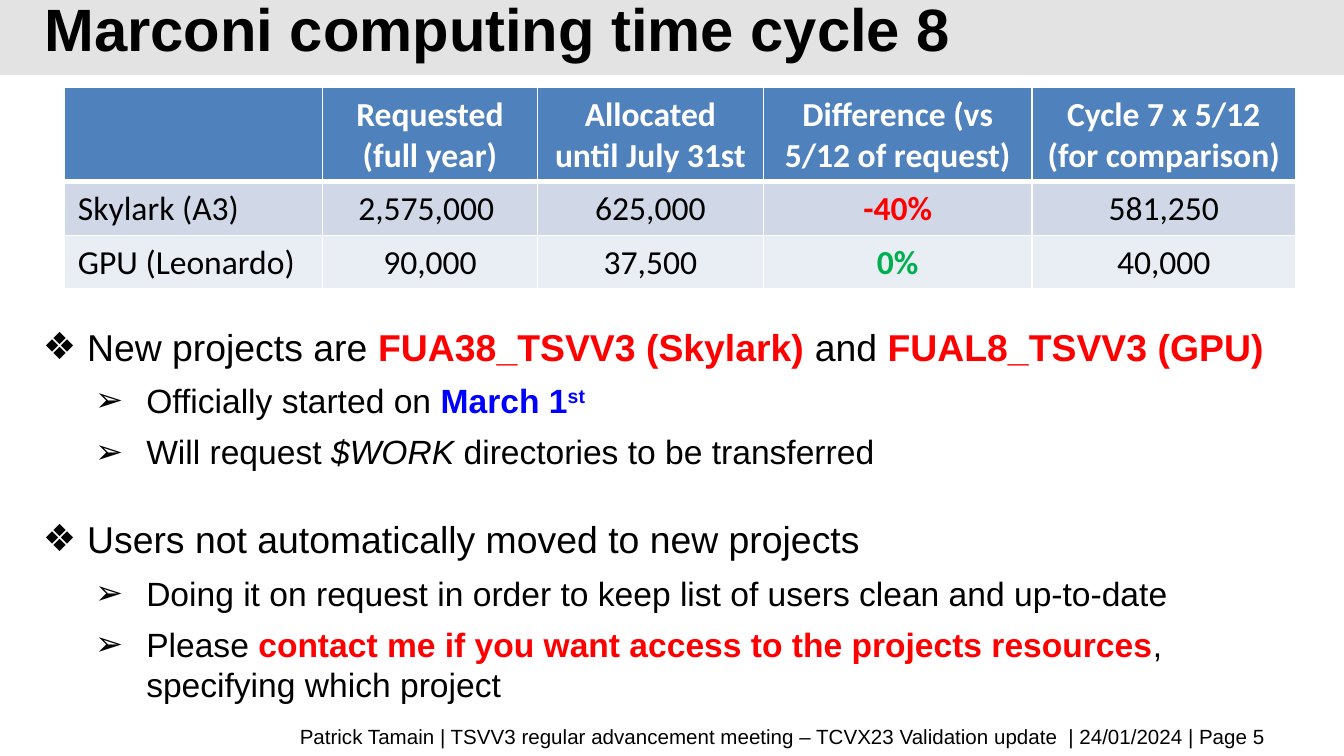
from lxml.etree import SubElement
from pptx import Presentation
from pptx.dml.color import RGBColor
from pptx.enum.shapes import MSO_SHAPE
from pptx.enum.text import MSO_ANCHOR, PP_ALIGN
from pptx.oxml.ns import qn
from pptx.util import Inches, Pt

COLORS = {
    "black": "000000", "white": "FFFFFF", "band": "E3E3E3", "red": "FF0000",
    "blue": "0000FF", "green": "00B050", "head": "4F81BD",
    "odd": "D0D8E8", "even": "E9EDF4",
}
COLS = [1.92, 1.6, 1.68, 2, 1.96]
ROWS = [0.7, 0.4, 0.4]
CELLS = [
    ["", "Requested\n(full year)", "Allocated until July 31st",
     "Difference (vs 5/12 of request)", "Cycle 7 x 5/12 (for comparison)"],
    ["Skylark (A3)", "2,575,000 ", "625,000", "-40%", "581,250"],
    ["GPU (Leonardo)", "90,000", "37,500", "0%", "40,000"],
]
MARKS = {"-40%": "red", "0%": "green"}

RED = {"color": "red", "bold": True}
BLUE = {"color": "blue", "bold": True}
# Each point: level, space before, runs of (text, format)
POINTS = [
    (1, 0, [("New projects are ", {}), ("FUA38_TSVV3 (Skylark) ", RED),
            ("and ", {}), ("FUAL8_TSVV3 (GPU)", RED)]),
    (2, 6, [("Officially started on ", {}), ("March 1", BLUE),
            ("st", {**BLUE, "raised": True})]),
    (2, 6, [("Will request ", {}), ("$WORK ", {"italic": True}),
            ("directories to be transferred", {})]),
    (1, 24, [("Users not automatically moved to new projects", {})]),
    (2, 6, [("Doing it on request in order to keep list of users clean "
             "and up-to-date", {})]),
    (2, 6, [("Please ", {}),
            ("contact me if you want access to the projects resources", RED),
            (", specifying which project", {})]),
]
# Level: bullet, left margin, hanging indent, text size
LEVELS = {1: ("❖", 0.33, 0.33, 20), 2: ("➢", 0.77, 0.38, 18)}


def rgb(name):
    return RGBColor.from_string(COLORS[name])


def write(para, text, size=18, face="Arial", color="black", bold=False,
          italic=False, raised=False):
    run = para.add_run()
    run.text = text
    font = run.font
    font.size, font.name = Pt(size), face
    font.bold, font.italic = bold, italic
    font.color.rgb = rgb(color)
    if raised:
        run._r.get_or_add_rPr().set("baseline", "30000")


def add_box(slide, left, top, width, height):
    box = slide.shapes.add_textbox(
        Inches(left), Inches(top), Inches(width), Inches(height))
    box.text_frame.word_wrap = True
    return box.text_frame


def add_band(slide):
    band = slide.shapes.add_shape(
        MSO_SHAPE.RECTANGLE, 0, 0, Inches(10), Inches(0.56))
    band.shadow.inherit = False
    band.fill.solid()
    band.fill.fore_color.rgb = rgb("band")
    band.line.fill.background()
    tree = slide.shapes._spTree
    tree.remove(band._element)
    tree.insert(2, band._element)


def set_title(slide, text):
    title = slide.shapes.title
    title.left, title.top = Inches(0.23), Inches(0.06)
    title.width, title.height = Inches(8.63), Inches(0.38)
    frame = title.text_frame
    frame.vertical_anchor = MSO_ANCHOR.MIDDLE
    para = frame.paragraphs[0]
    para.alignment = PP_ALIGN.LEFT
    para.line_spacing = Pt(32)
    write(para, text, size=32, bold=True)


def add_foot(slide, text):
    frame = add_box(slide, 0.51, 5.37, 9.01, 0.22)
    frame.vertical_anchor = MSO_ANCHOR.MIDDLE
    para = frame.paragraphs[0]
    para.alignment = PP_ALIGN.RIGHT
    write(para, text, size=11)


def add_points(slide):
    frame = add_box(slide, 0.22, 2.36, 9.37, 2.99)
    for num, (level, space, runs) in enumerate(POINTS):
        para = frame.add_paragraph() if num else frame.paragraphs[0]
        mark, left, hang, size = LEVELS[level]
        para.level = level - 1
        para.space_before = Pt(space)
        props = para._p.get_or_add_pPr()
        props.set("marL", str(Inches(left)))
        props.set("indent", str(-Inches(hang)))
        tint = SubElement(props, qn("a:buClr"))
        SubElement(tint, qn("a:srgbClr"), val=COLORS["black"])
        SubElement(props, qn("a:buFont"), typeface="Arial")
        SubElement(props, qn("a:buChar"), char=mark)
        for text, style in runs:
            write(para, text, size=size, **style)


def add_edges(cell, top, base):
    """Draw white cell borders; top and base are widths in points."""
    props = cell._tc.get_or_add_tcPr()
    for side, width in zip("LRTB", (1, 1, top, base)):
        line = SubElement(props, qn(f"a:ln{side}"), w=str(Pt(width)))
        fill = SubElement(line, qn("a:solidFill"))
        SubElement(fill, qn("a:srgbClr"), val=COLORS["white"])


def fill_cell(cell, text, row, col):
    head = row == 0
    add_edges(cell, 3 if row == 1 else 1, 3 if head else 1)
    cell.fill.solid()
    cell.fill.fore_color.rgb = rgb(("head", "odd", "even")[row])
    color = "white" if head else MARKS.get(text, "black")
    for num, line in enumerate(text.split("\n")):
        frame = cell.text_frame
        para = frame.add_paragraph() if num else frame.paragraphs[0]
        para.alignment = PP_ALIGN.CENTER if col else PP_ALIGN.LEFT
        if line:
            write(para, line, face="Calibri", color=color,
                  bold=head or text in MARKS)


def add_grid(slide):
    table = slide.shapes.add_table(
        len(ROWS), len(COLS), Inches(0.48), Inches(0.65),
        Inches(sum(COLS)), Inches(sum(ROWS))).table
    for col, width in zip(table.columns, COLS):
        col.width = Inches(width)
    for row, height in zip(table.rows, ROWS):
        row.height = Inches(height)
    for row, line in enumerate(CELLS):
        for col, text in enumerate(line):
            fill_cell(table.cell(row, col), text, row, col)


def main():
    deck = Presentation()
    deck.slide_width = Inches(10)
    deck.slide_height = Inches(10 * 9 / 16)
    slide = deck.slides.add_slide(deck.slide_layouts[5])
    add_band(slide)
    set_title(slide, "Marconi computing time cycle 8")
    add_foot(slide, "Patrick Tamain | TSVV3 regular advancement meeting – "
                    "TCVX23 Validation update  | 24/01/2024 | Page 5")
    add_points(slide)
    add_grid(slide)
    deck.save("out.pptx")


if __name__ == "__main__":
    main()
